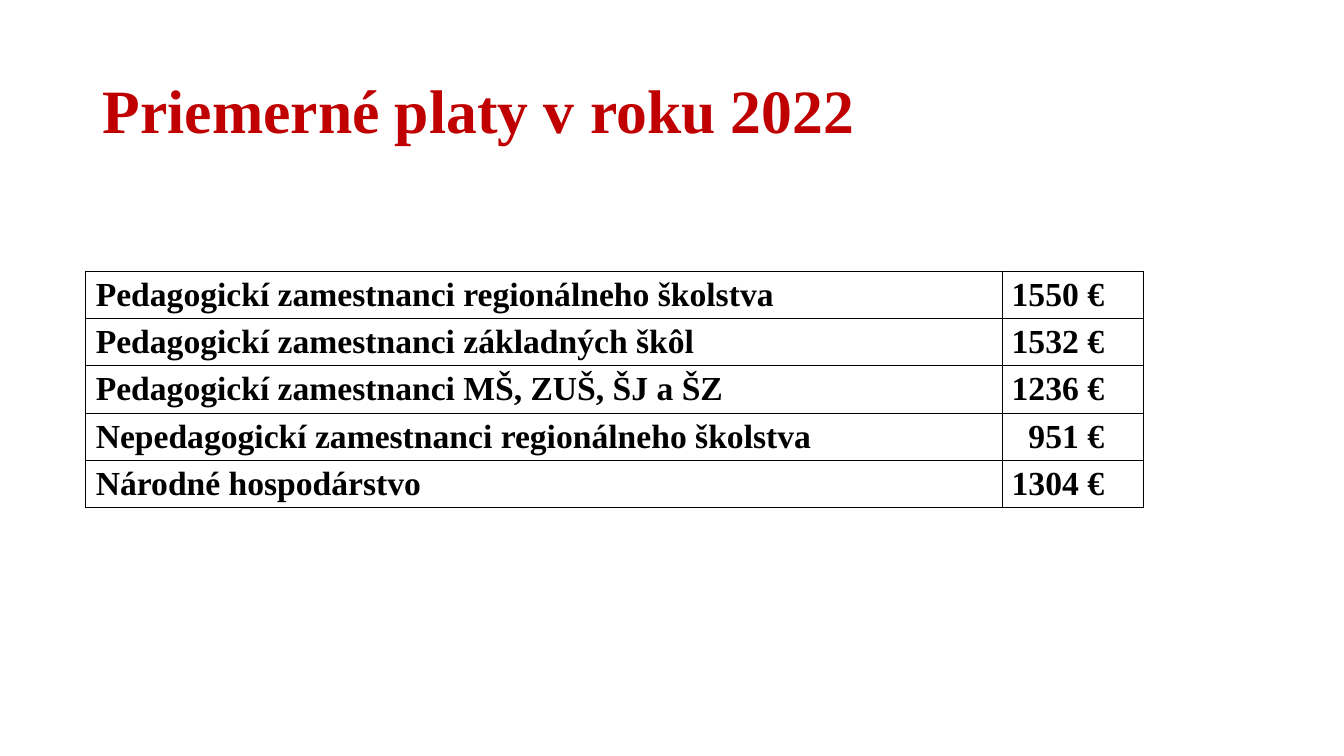
from lxml.etree import SubElement
from pptx import Presentation
from pptx.dml.color import RGBColor
from pptx.enum.text import MSO_ANCHOR, MSO_AUTO_SIZE, PP_ALIGN
from pptx.oxml.ns import qn
from pptx.util import Inches, Pt

SALARIES = [
    ("Pedagogickí zamestnanci regionálneho školstva", "1550 €"),
    ("Pedagogickí zamestnanci základných škôl", "1532 €"),
    ("Pedagogickí zamestnanci MŠ, ZUŠ, ŠJ a ŠZ", "1236 €"),
    ("Nepedagogickí zamestnanci regionálneho školstva", "951 €"),
    ("Národné hospodárstvo", "1304 €"),
]


def color(value):
    return RGBColor.from_string(value)


class SalarySlide:
    font_name = "Times New Roman"
    title_color = "C00000"
    text_color = "000000"
    border_color = "000000"

    def __init__(self, presentation):
        self.slide = presentation.slides.add_slide(presentation.slide_layouts[5])

    def add_run(self, paragraph, text, size, text_color):
        run = paragraph.add_run()
        run.text = text
        run.font.name = self.font_name
        run.font.size = Pt(size)
        run.font.bold = True
        run.font.color.rgb = color(text_color)

    def add_title(self, text, left, top, width, height):
        title = self.slide.shapes.title
        title.left, title.top = Inches(left), Inches(top)
        title.width, title.height = Inches(width), Inches(height)
        frame = title.text_frame
        frame.word_wrap = True
        frame.auto_size = MSO_AUTO_SIZE.NONE
        frame.vertical_anchor = MSO_ANCHOR.MIDDLE
        paragraph = frame.paragraphs[0]
        paragraph.alignment = PP_ALIGN.LEFT
        paragraph.line_spacing = 0.9
        self.add_run(paragraph, text, 44, self.title_color)

    def add_borders(self, cell):
        properties = cell._tc.get_or_add_tcPr()
        for side in ("a:lnL", "a:lnR", "a:lnT", "a:lnB"):
            line = SubElement(properties, qn(side), w=str(Pt(1)))
            fill = SubElement(line, qn("a:solidFill"))
            SubElement(fill, qn("a:srgbClr"), val=self.border_color)

    def add_table(self, rows, left, top, column_widths, row_height):
        table = self.slide.shapes.add_table(
            len(rows), len(column_widths), Inches(left), Inches(top),
            Inches(sum(column_widths)), Inches(row_height * len(rows)),
        ).table
        table.first_row = False
        table.horz_banding = False
        for column, width in zip(table.columns, column_widths):
            column.width = Inches(width)
        for row, texts in zip(table.rows, rows):
            row.height = Inches(row_height)
            for cell, text in zip(row.cells, texts):
                self.add_borders(cell)
                cell.fill.background()
                self.add_run(cell.text_frame.paragraphs[0], text, 24, self.text_color)
            amount = row.cells[len(texts) - 1]
            amount.margin_left = Inches(0.05)
            amount.margin_right = Inches(0.39)
            amount.text_frame.paragraphs[0].alignment = PP_ALIGN.RIGHT


def main():
    presentation = Presentation()
    presentation.slide_width = Inches(13.33)
    presentation.slide_height = Inches(7.5)
    salary_slide = SalarySlide(presentation)
    salary_slide.add_title("Priemerné platy v roku 2022", 0.92, 0.4, 11.5, 1.45)
    salary_slide.add_table(SALARIES, 0.85, 2.69, (9.09, 1.4), 0.47)
    presentation.save("out.pptx")


if __name__ == "__main__":
    main()
